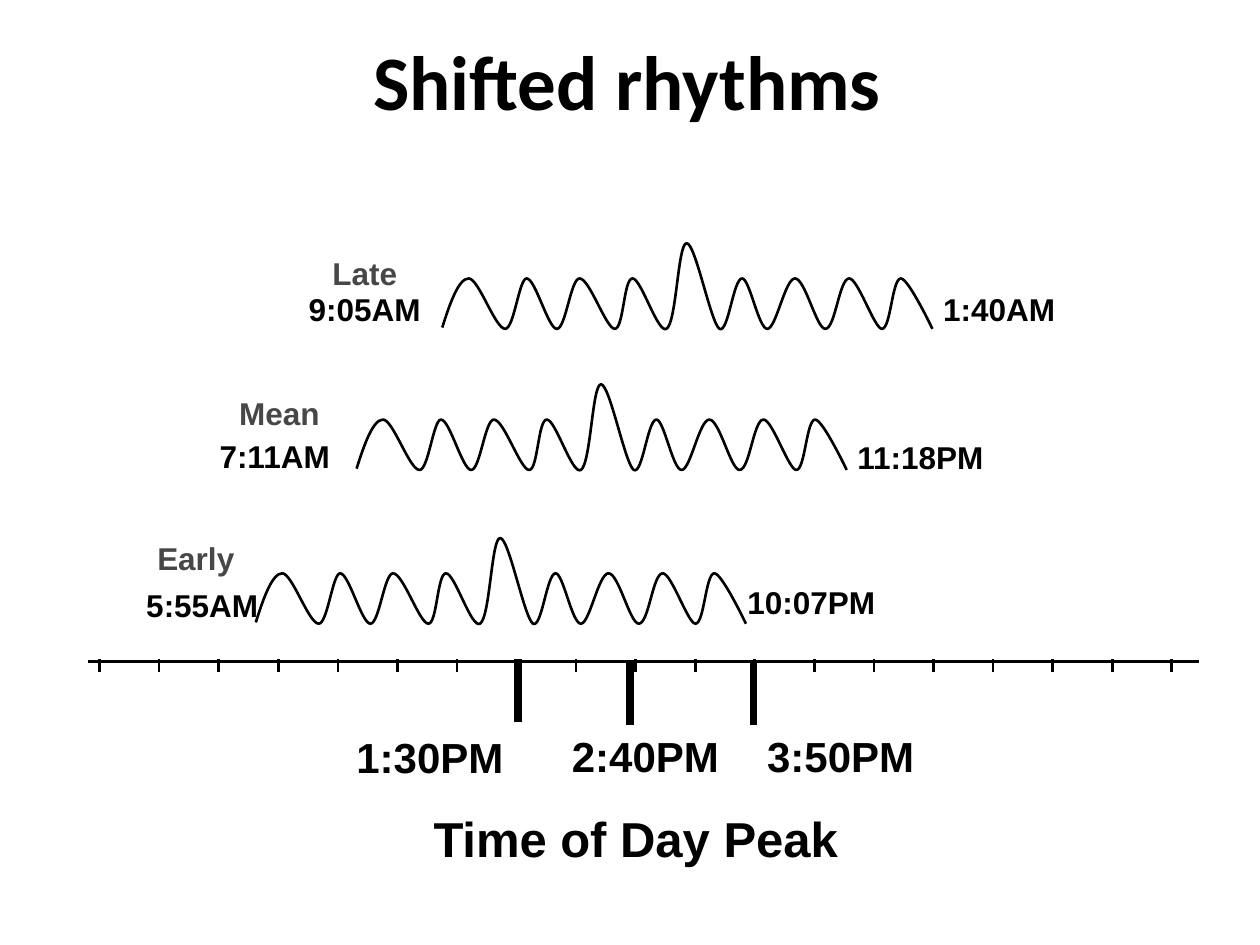
from dataclasses import dataclass

from lxml import etree
from pptx import Presentation
from pptx.dml.color import RGBColor
from pptx.enum import shapes, text
from pptx.oxml.ns import qn
from pptx.util import Emu, Inches, Pt

BLACK = RGBColor(0x00, 0x00, 0x00)
GRAY = RGBColor(0x47, 0x47, 0x47)
LEFT, MID = text.PP_ALIGN.LEFT, text.PP_ALIGN.CENTER

# The grid: 100 columns by 75 rows over the whole slide
WIDE, HIGH = Inches(10), Inches(7.5)
CELL = WIDE / 100

# One rhythm: start and Bezier points, in tenths of a cell
START = (0, 67)
CURVE = [
    (6, 48), (13, 28), (21, 28), (29, 28), (42, 68), (50, 68),
    (57, 68), (61, 28), (67, 28), (74, 28), (84, 68), (91, 68),
    (98, 68), (102, 28), (109, 28), (117, 28), (130, 68), (137, 68),
    (144, 68), (144, 28), (151, 28), (158, 28), (171, 72), (178, 68),
    (186, 63), (187, 0), (194, 0), (201, 0), (213, 63), (220, 68),
    (227, 72), (231, 28), (238, 28), (244, 28), (251, 68), (258, 68),
    (265, 68), (272, 28), (280, 28), (288, 28), (297, 68), (304, 68),
    (312, 68), (315, 28), (323, 28), (330, 28), (343, 68), (349, 68),
    (356, 68), (357, 28), (364, 28), (370, 28), (389, 68), (389, 68),
]


@dataclass
class Label:
    words: str
    col: float
    row: float
    cols: float
    rows: float = 4
    size: int = 18
    color: RGBColor = BLACK
    align: int = MID
    wrap: bool = True
    lead: float = 1.0


@dataclass
class Wave:
    col: float
    row: float
    labels: tuple


@dataclass
class Peak:
    col: float
    row: float
    label: Label


def cells(count: float) -> Emu:
    return Emu(round(count * CELL))


def style(item, **values) -> None:
    for name, value in values.items():
        setattr(item, name, value)


def write(frame, words: str, align: int, lead: float, **font) -> None:
    line = frame.paragraphs[0]
    style(line, alignment=align, line_spacing=lead)
    run = line.add_run()
    run.text = words
    color = font.pop("color")
    style(run.font, bold=True, **font)
    run.font.color.rgb = color


def draw_label(slide, label: Label) -> None:
    box = slide.shapes.add_textbox(
        *map(cells, (label.col, label.row, label.cols, label.rows)))
    style(box.text_frame, word_wrap=label.wrap,
          auto_size=text.MSO_AUTO_SIZE.SHAPE_TO_FIT_TEXT)
    write(box.text_frame, label.words, label.align, label.lead,
          name="Arial", size=Pt(label.size), color=label.color)


def draw_line(parent, start: tuple, end: tuple, width: float) -> None:
    line = parent.add_connector(
        shapes.MSO_CONNECTOR.STRAIGHT, *map(cells, start + end))
    line.line.color.rgb = BLACK
    line.line.width = Pt(width)
    etree.SubElement(line._element.spPr, qn("a:effectLst"))


def draw_wave(slide, wave: Wave) -> None:
    pen = slide.shapes.build_freeform(*START, scale=CELL / 10)
    pen.add_line_segments(CURVE, close=False)
    shape = pen.convert_to_shape(cells(wave.col), cells(wave.row))
    # Join each three points into one Bezier segment
    path = next(shape._element.iter(qn("a:path")))
    steps = path.findall(qn("a:lnTo"))
    for k in range(0, len(steps), 3):
        bend = etree.SubElement(path, qn("a:cubicBezTo"))
        for step in steps[k:k + 3]:
            bend.append(step[0])
            path.remove(step)
    shape.fill.background()
    shape.line.color.rgb = BLACK
    shape.line.width = Pt(1.5)
    shape.shadow.inherit = False
    for label in wave.labels:
        draw_label(slide, label)


def name_tag(words: str, col: float, row: float, cols: float) -> Label:
    return Label(words, col, row, cols, 3.7, color=GRAY, align=LEFT, lead=0.9)


def peak_tag(words: str, col: float, row: float) -> Label:
    return Label(words, col, row, 13.8, 5, size=24, align=LEFT, wrap=False)


WAVES = [
    Wave(35.1, 19.3, (name_tag("Late", 25.4, 20, 11.4),
                      Label("9:05AM", 22.6, 22.5, 12.7),
                      Label("1:40AM", 73.3, 22.5, 12))),
    Wave(28.3, 30.5, (name_tag("Mean", 18, 31.1, 12.2),
                      Label("7:11AM", 16, 34.2, 11.6),
                      Label("11:18PM", 66.5, 34.3, 13.1))),
    Wave(20.3, 42.7, (name_tag("Early", 11.5, 42.6, 12.6),
                      Label("5:55AM", 10, 46, 12.1),
                      Label("10:07PM", 58.1, 45.8, 12.6))),
]
PEAKS = [
    Peak(41.1, 52.3, peak_tag("1:30PM", 27.3, 57.6)),
    Peak(50, 52.5, peak_tag("2:40PM", 44.4, 57.5)),
    Peak(59.8, 52.5, peak_tag("3:50PM", 59.9, 57.5)),
]
AXIS = Label("Time of Day Peak", 33.2, 63.7, 34.5, 5.7, size=28, wrap=False)
TICKS, FIRST, LAST = 19, 7.9, 93


def main() -> None:
    deck = Presentation()
    style(deck, slide_width=WIDE, slide_height=HIGH)
    slide = deck.slides.add_slide(deck.slide_layouts[5])

    # Title
    title = slide.shapes.title
    style(title, left=cells(4.8), top=cells(1.7),
          width=cells(90), height=cells(9.2))
    title.text_frame.vertical_anchor = text.MSO_ANCHOR.MIDDLE
    write(title.text_frame, "Shifted rhythms", MID, 1.0,
          name="Calibri", size=Pt(44), color=BLACK)

    # Time axis with even ticks
    draw_line(slide.shapes, (7, 52.5), (95.2, 52.5), 1.5)
    ticks = slide.shapes.add_group_shape().shapes
    for k in range(TICKS):
        col = FIRST + k * (LAST - FIRST) / (TICKS - 1)
        draw_line(ticks, (col, 52.3), (col, 53.3), 1.5)

    # Peak markers and axis title
    for peak in PEAKS:
        draw_line(slide.shapes, (peak.col, peak.row),
                  (peak.col, peak.row + 5), 4.5)
        draw_label(slide, peak.label)
    draw_label(slide, AXIS)

    # Rhythms
    for wave in WAVES:
        draw_wave(slide, wave)

    deck.save("out.pptx")


if __name__ == "__main__":
    main()
